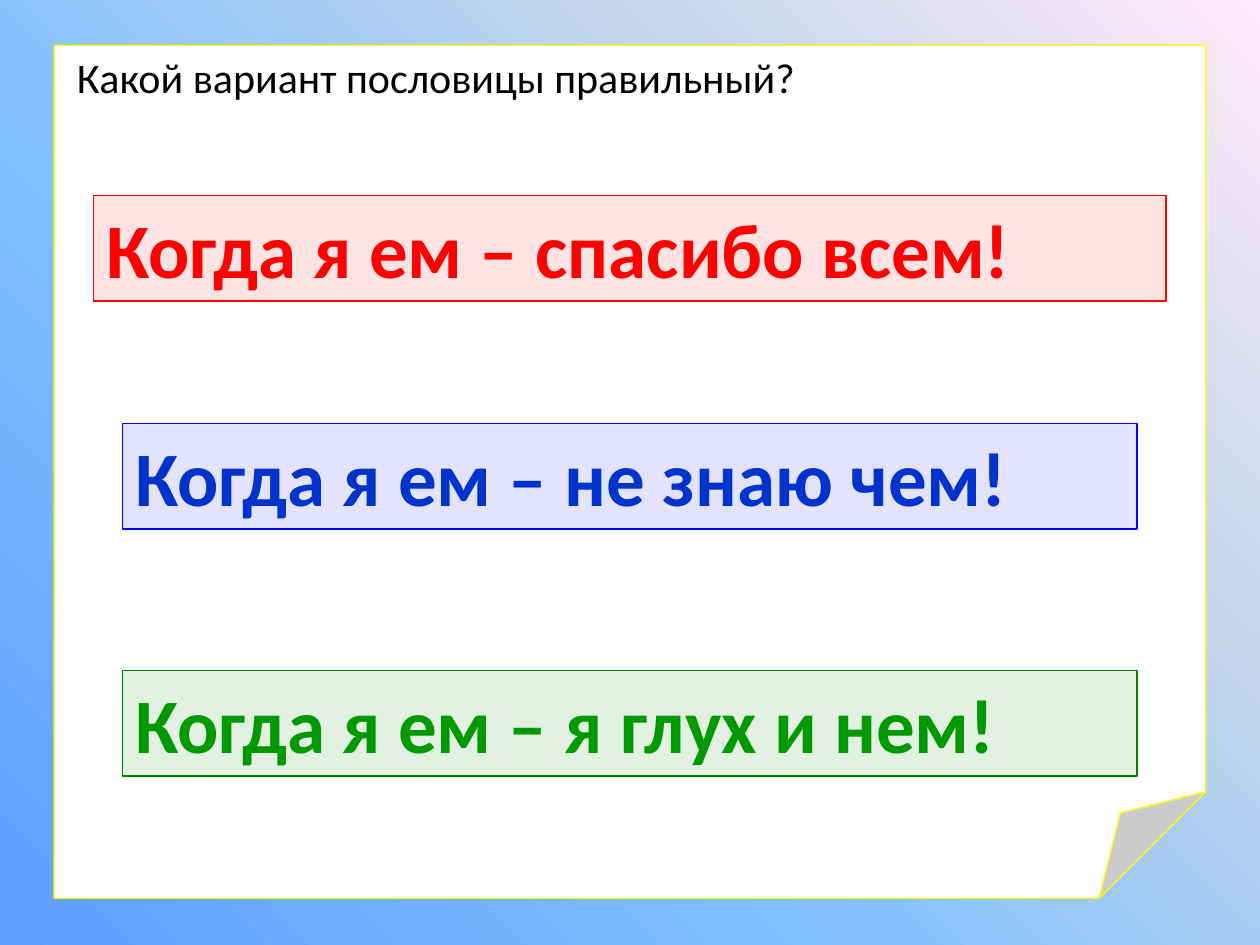
from copy import deepcopy
from dataclasses import dataclass

from lxml.etree import SubElement
from pptx import Presentation
from pptx.dml.color import RGBColor
from pptx.enum.shapes import MSO_SHAPE as Shape
from pptx.enum.text import MSO_ANCHOR as Anchor, MSO_AUTO_SIZE as AutoSize, PP_ALIGN as Align
from pptx.oxml.ns import qn
from pptx.util import Inches, Pt

WIDTH, HEIGHT = 10, 7.5
FONT = "Calibri"
TITLE_ONLY = 5
COLORS = {
    "paper": "FFFFFF", "paper edge": "FFFF00", "title": "000000",
    "red": "FF0000", "red text": "FF0000",
    "blue": "0000FF", "blue text": "0033CC",
    "green": "008000", "green text": "009900",
}
SKY = [(0, "5E9EFF"), (0.4, "85C2FF"), (0.7, "C4D6EB"), (1, "FFEBFA")]


@dataclass
class Proverb:
    text: str
    color: str
    top: float
    width: float


PROVERBS = [
    Proverb("Когда я ем – спасибо всем!", "red", 1.55, 8.51),
    Proverb("Когда я ем – не знаю чем!", "blue", 3.36, 8.05),
    Proverb("Когда я ем – я глух и нем!", "green", 5.32, 8.05),
]


def rgb(name: str) -> RGBColor:
    return RGBColor.from_string(COLORS[name])


def paint_background(page) -> None:
    fill = page.background.fill
    fill.gradient()
    fill.gradient_angle = 45
    stop_list = next(page._element.iter(qn("a:gsLst")))
    while len(stop_list) < len(SKY):
        stop_list.append(deepcopy(stop_list[0]))
    for stop, (position, color) in zip(fill.gradient_stops, SKY):
        stop.position = position
        stop.color.rgb = RGBColor.from_string(color)


def add_panel(page, kind, left: float, top: float, width: float, height: float,
              fill: str, line: str):
    panel = page.shapes.add_shape(
        kind, Inches(left), Inches(top), Inches(width), Inches(height))
    panel.shadow.inherit = False
    panel.fill.solid()
    panel.fill.fore_color.rgb = rgb(fill)
    panel.line.color.rgb = rgb(line)
    panel.line.width = Pt(0.75)
    return panel


def write(box, text: str, size: int, color: str, bold: bool) -> None:
    frame = box.text_frame
    frame.text = text
    frame.word_wrap = True
    frame.auto_size = AutoSize.NONE
    frame.vertical_anchor = Anchor.TOP
    para = frame.paragraphs[0]
    para.alignment = Align.LEFT
    para.font.name = FONT
    para.font.size = Pt(size)
    para.font.bold = bold
    para.font.color.rgb = rgb(color)


def add_proverb(page, proverb: Proverb) -> None:
    left = (WIDTH - proverb.width) / 2
    box = add_panel(page, Shape.RECTANGLE, left, proverb.top, proverb.width, 0.84,
                    proverb.color, proverb.color)
    tint = box._element.spPr.find(qn("a:solidFill"))[0]
    SubElement(tint, qn("a:alpha"), val="11000")
    write(box, proverb.text, 44, f"{proverb.color} text", True)


def main() -> None:
    deck = Presentation()
    deck.slide_width, deck.slide_height = Inches(WIDTH), Inches(HEIGHT)
    page = deck.slides.add_slide(deck.slide_layouts[TITLE_ONLY])
    paint_background(page)

    # Sheet of paper with a folded corner
    paper = add_panel(page, Shape.FOLDED_CORNER, 0.43, 0.36, 9.14, 6.77,
                      "paper", "paper edge")
    fold = next(paper._element.iter(qn("a:avLst")))
    SubElement(fold, qn("a:gd"), name="adj", fmla="val 12500")

    # Question, lying on the paper
    title = page.shapes.title
    title.left, title.top = Inches(0.51), Inches(0.36)
    title.width, title.height = Inches(6.42), Inches(0.5)
    write(title, "Какой вариант пословицы правильный?", 24, "title", False)
    paper._element.addnext(title._element)

    # Answer choices
    for proverb in PROVERBS:
        add_proverb(page, proverb)

    deck.save("out.pptx")


if __name__ == "__main__":
    main()
